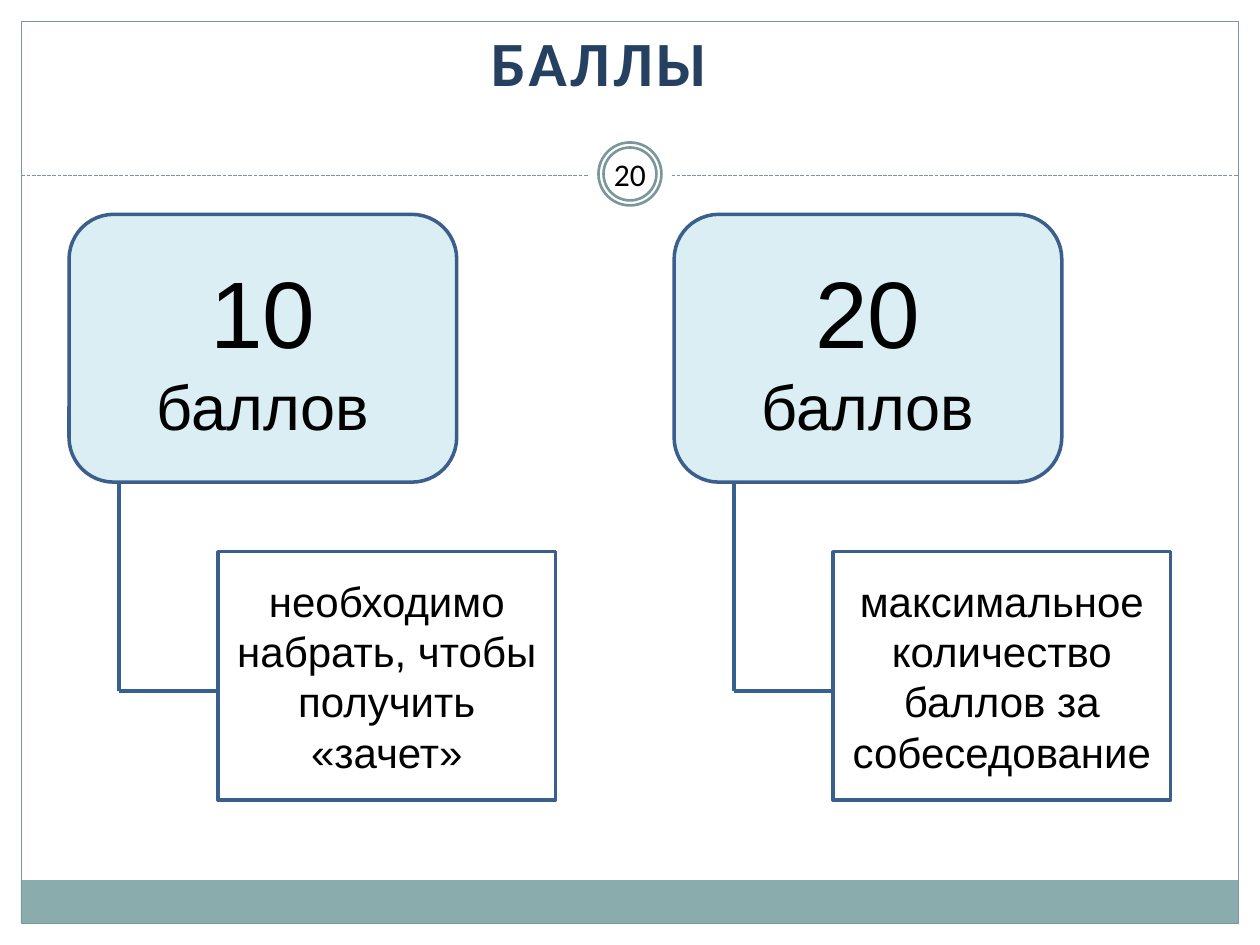
from lxml.etree import SubElement
from pptx import Presentation
from pptx.dml.color import RGBColor
from pptx.enum.dml import MSO_LINE
from pptx.enum.shapes import MSO_CONNECTOR, MSO_SHAPE
from pptx.enum.text import MSO_ANCHOR, PP_ALIGN
from pptx.oxml.ns import qn
from pptx.util import Pt

COLORS = {
    "white": "FFFFFF", "black": "000000", "title": "254061",
    "band": "8BACAD", "frame": "7A9799",
    "card": "DBEEF4", "edge": "3A5F8C", "link": "376092",
}

prs = Presentation()
prs.slide_width, prs.slide_height = Pt(720), Pt(540)
slide = prs.slides.add_slide(prs.slide_layouts[5])


def add_box(kind, box, fill=None, line=None, width=0.75, paras=()):
    """Add a preset shape with centred (text, size, font) paragraphs."""
    shape = slide.shapes.add_shape(kind, *map(Pt, box))
    shape.shadow.inherit = False
    if fill:
        shape.fill.solid()
        shape.fill.fore_color.rgb = RGBColor.from_string(COLORS[fill])
    else:
        shape.fill.background()
    if line:
        shape.line.color.rgb = RGBColor.from_string(COLORS[line])
        shape.line.width = Pt(width)
    else:
        shape.line.fill.background()
    frame = shape.text_frame
    frame.word_wrap = True
    frame.vertical_anchor = MSO_ANCHOR.MIDDLE
    for i, (text, size, font) in enumerate(paras):
        para = frame.add_paragraph() if i else frame.paragraphs[0]
        para.alignment = PP_ALIGN.CENTER
        run = para.add_run()
        run.text = text
        run.font.size, run.font.name = Pt(size), font
        run.font.color.rgb = RGBColor.from_string(COLORS["black"])
    return shape


def add_line(x1, y1, x2, y2, color, width):
    line = slide.shapes.add_connector(
        MSO_CONNECTOR.STRAIGHT, Pt(x1), Pt(y1), Pt(x2), Pt(y2))
    line.line.color.rgb = RGBColor.from_string(COLORS[color])
    line.line.width = Pt(width)
    SubElement(line._element.spPr, qn("a:effectLst"))
    return line


# Frame, bottom band and dashed divider
add_box(MSO_SHAPE.RECTANGLE, (12, 503, 695.5, 24.5), "band")
add_box(MSO_SHAPE.RECTANGLE, (12.25, 12.25, 695.5, 515.5), line="frame")
rule = add_line(12.25, 100.5, 707.75, 100.5, "frame", 0.75)
rule.line.dash_style = MSO_LINE.SQUARE_DOT

# Slide number badge: white disc with two rings
for size, fill, line in ((48, "white", None), (36, None, "frame"),
                         (30.25, None, "frame")):
    add_box(MSO_SHAPE.OVAL, (360 - size / 2, 99.4 - size / 2, size, size),
            fill, line, 1.5)
badge = add_box(MSO_SHAPE.RECTANGLE, (342, 84.25, 36, 30.25),
                paras=[("20", 18, "Calibri")])
badge.text_frame.margin_left = badge.text_frame.margin_right = 0

# Title
title = slide.shapes.title
title.left, title.top, title.width, title.height = map(Pt, (2, 15, 680.5, 85))
title.text_frame.vertical_anchor = MSO_ANCHOR.TOP
para = title.text_frame.paragraphs[0]
para.alignment, para.line_spacing = PP_ALIGN.CENTER, 0.9
run = para.add_run()
run.text = "БАЛЛЫ"
run.font.size, run.font.name, run.font.bold = Pt(36), "Calibri", True
run.font.color.rgb = RGBColor.from_string(COLORS["title"])
run.font._element.set("spc", "200")

# Score cards, each with a note hanging from an elbow
for card, stem, note, score, text in (
    (39.5, 68, 124.5, "10", "необходимо набрать, чтобы получить «зачет»"),
    (385.25, 419.5, 476, "20",
     "максимальное количество баллов за собеседование"),
):
    add_box(MSO_SHAPE.ROUNDED_RECTANGLE, (card, 122.5, 221.5, 153),
            "card", "edge", 2,
            [(score, 54, "Arial"), ("баллов", 36, "Arial")])
    add_box(MSO_SHAPE.RECTANGLE, (note, 315.25, 193, 142), None, "edge", 2,
            [(text, 24, "Arial")])
    add_line(stem, 275.5, stem, 394.75, "link", 2)
    add_line(stem, 394.75, note, 394.75, "link", 2)

prs.save("out.pptx")
